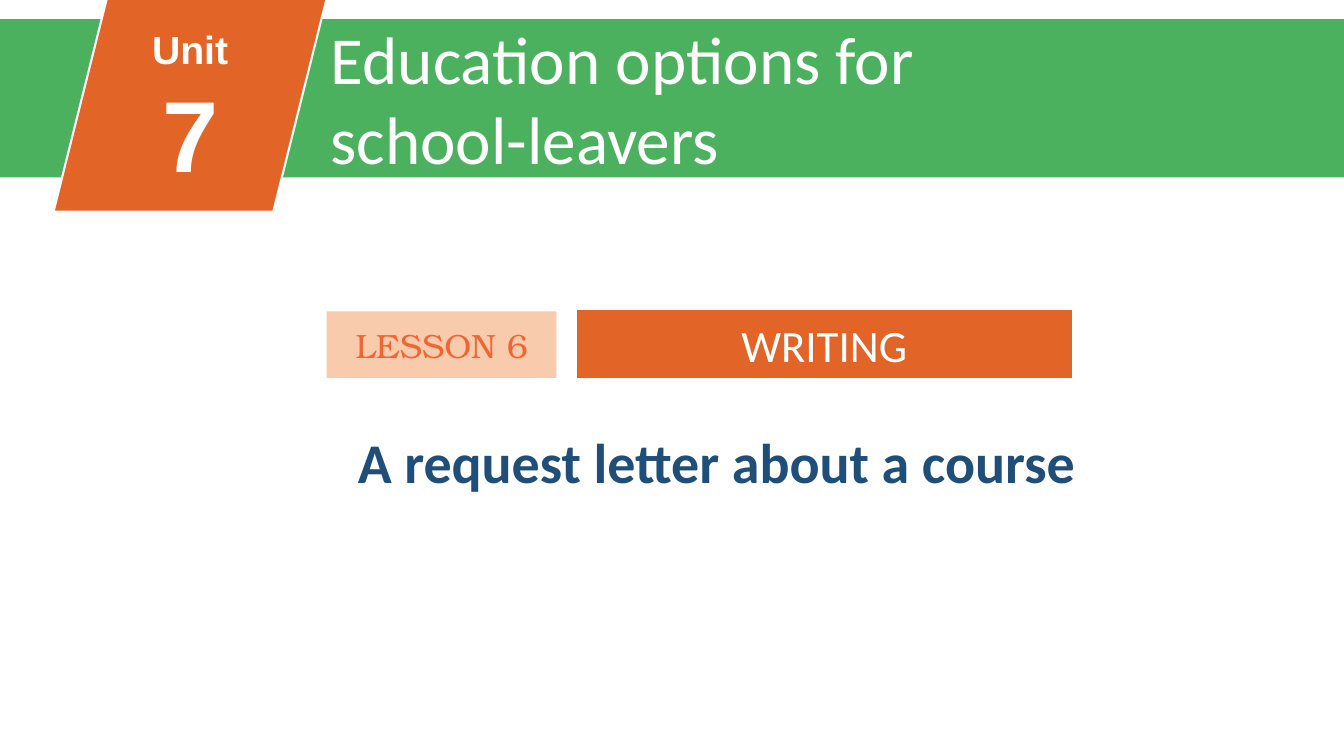
from pptx import Presentation
from pptx.dml.color import RGBColor
from pptx.enum.shapes import MSO_SHAPE as Shape
from pptx.enum.text import MSO_ANCHOR as Anchor, PP_ALIGN as Align
from pptx.util import Inches, Pt

COLOURS = {
    "orange": "E36427",
    "peach": "F8CBAD",
    "coral": "F26532",
    "green": "4CB15F",
    "navy": "1F4E79",
    "white": "FFFFFF",
}


class LessonSlide:
    """Draws styled elements on one slide, placed in percent of its size."""

    def __init__(self, deck):
        self.deck = deck
        self.page = deck.slides.add_slide(deck.slide_layouts[6])

    def colour(self, name):
        return RGBColor.from_string(COLOURS[name])

    def place(self, left, top, width, height):
        across, down = self.deck.slide_width / 100, self.deck.slide_height / 100
        return [int(n) for n in (left * across, top * down, width * across, height * down)]

    def block(self, area, fill, preset=Shape.RECTANGLE, outlined=False):
        box = self.page.shapes.add_shape(preset, *self.place(*area))
        box.shadow.inherit = False
        box.fill.solid()
        box.fill.fore_color.rgb = self.colour(fill)
        if outlined:
            box.line.color.rgb = self.colour("white")
            box.line.width = Pt(1.5)
        else:
            box.line.fill.background()
        return box

    def set_text(self, box, lines, font, colour, bold=False, align=Align.CENTER, anchor=Anchor.MIDDLE):
        frame = box.text_frame
        frame.word_wrap = True
        frame.vertical_anchor = anchor
        frame.text = "\n".join(text for text, size in lines)
        for para, (text, size) in zip(frame.paragraphs, lines):
            para.alignment = align
            for span in para.runs:
                span.font.name = font
                span.font.size = Pt(size)
                span.font.bold = bold
                span.font.color.rgb = self.colour(colour)

    def label(self, area, lines, font, colour, **style):
        box = self.page.shapes.add_textbox(*self.place(*area))
        self.set_text(box, lines, font, colour, **style)


def main():
    deck = Presentation()
    deck.slide_width, deck.slide_height = Inches(13.33), Inches(7.5)
    slide = LessonSlide(deck)

    skill = slide.block((42.84, 40.93, 36.98, 9.2), "orange", outlined=True)
    slide.set_text(skill, [("WRITING", 32)], "Calibri", "white")
    slide.label((12.38, 55.87, 81.85, 10.27), [("A request letter about a course", 40)],
                "Calibri", "navy", bold=True, anchor=Anchor.TOP)
    lesson = slide.block((24.31, 41.2, 17.1, 8.8), "peach")
    slide.set_text(lesson, [("LESSON 6", 24)], "TeX Gyre Bonum", "coral")

    slide.block((0, 2.53, 100, 20.93), "green")
    slide.block((3.98, -0.27, 20.33, 28.27), "orange", Shape.PARALLELOGRAM, outlined=True)
    slide.label((8.93, 2.53, 10.43, 23.73), [("Unit", 28), ("7", 72)],
                "Arial", "white", bold=True)
    slide.label((23.86, 1.6, 76.14, 22.93),
                [("Education options for", 48), ("school-leavers", 48)],
                "Calibri", "white", align=Align.LEFT, anchor=Anchor.TOP)

    deck.save("out.pptx")


if __name__ == "__main__":
    main()
